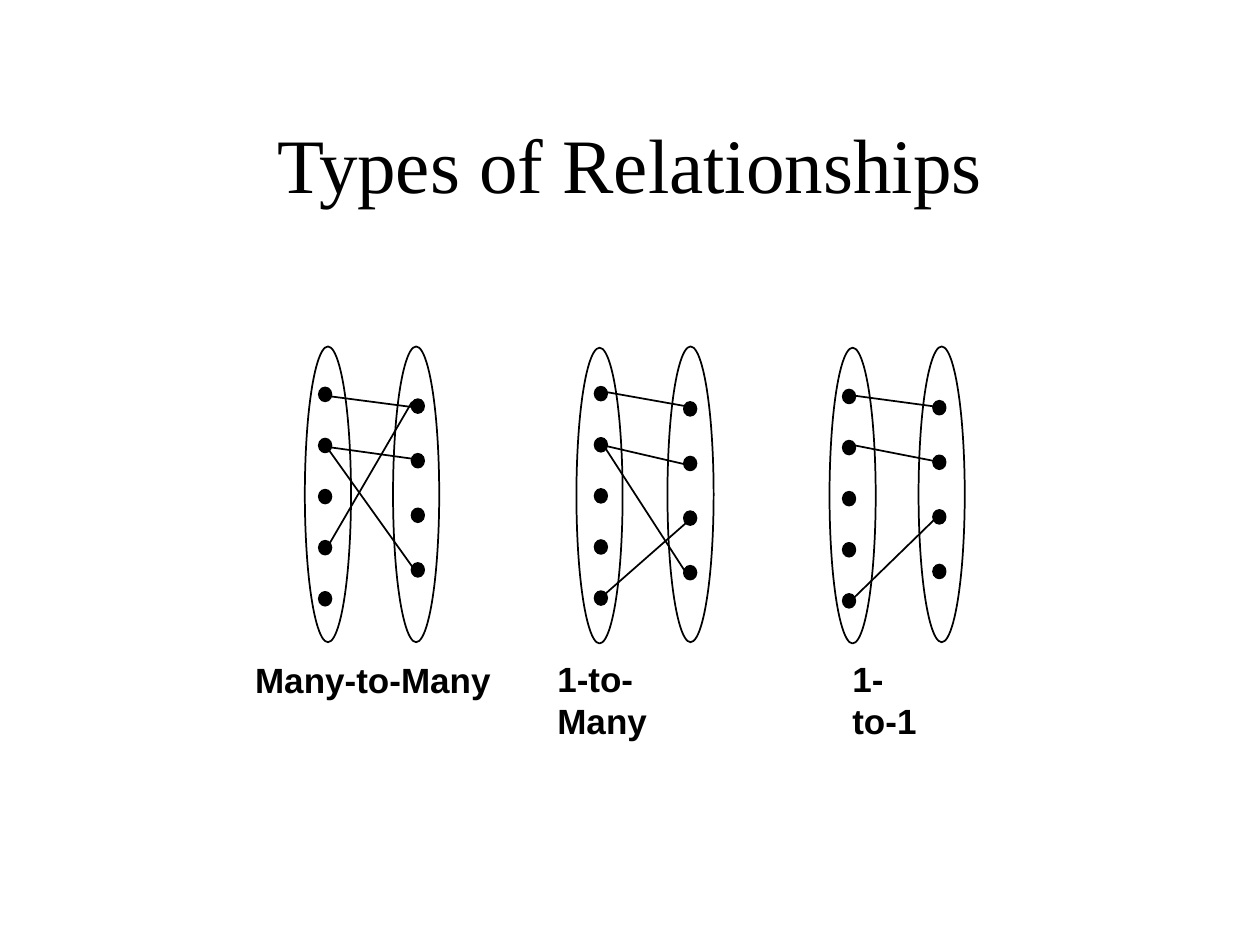
import pptx
import pptx.util
import pptx.dml.color
import pptx.enum.shapes
import pptx.enum.text
import pptx.oxml.ns
import lxml.etree

Pt = pptx.util.Pt
SHAPE = pptx.enum.shapes.MSO_SHAPE
ALIGN = pptx.enum.text.PP_ALIGN

THEME = {
    "ink": pptx.dml.color.RGBColor(0, 0, 0),
    "line": 1,
    "title": {"name": "Times New Roman", "size": Pt(44), "bold": False},
    "label": {"name": "Arial", "size": Pt(20), "bold": True},
}
TITLE = ("Types of Relationships", (54, 48, 612, 90))
OVAL = (26.4, 169)
DOT = (7.2, 7.9)

GRAPHS = [
    {
        "label": ("Many-to-Many", (138.2, 373, 149.8, 31), ALIGN.CENTER),
        "ovals": [(174.2, 198), (224.6, 198)],
        "dots": [(182.2, 221.4, 5, 29.2), (235.2, 228.1, 4, 31.2)],
        "links": [
            (185.8, 226.1, 235.4, 232.6),
            (188.6, 255.6, 240.5, 262.8),
            (187.2, 312.5, 235.4, 229.7),
            (185.8, 254.2, 238.3, 327.6),
        ],
    },
    {
        "label": ("1-to-Many", (311.4, 372.2, 107, 31), ALIGN.LEFT),
        "ovals": [(329.4, 198.7), (381.4, 198)],
        "dots": [(339.8, 221, 5, 29.2), (390.8, 229.7, 4, 31.2)],
        "links": [
            (345.6, 223.9, 394.6, 232.6),
            (343.4, 254.2, 393.1, 265.7),
            (345.6, 255.6, 393.1, 329),
            (394.6, 296.6, 341.3, 343.4),
        ],
    },
    {
        "label": ("1-to-1", (480, 372.2, 67, 31), ALIGN.LEFT),
        "ovals": [(474, 198.7), (524.9, 198)],
        "dots": [(481.6, 222.6, 5, 29.2), (533.2, 229, 4, 31.2)],
        "links": [
            (488.2, 226.1, 536.4, 232.6),
            (486.7, 254.2, 537.8, 264.2),
            (485.3, 344.2, 536.4, 294.5),
        ],
    },
]


def style(item, values):
    for key, value in values.items():
        setattr(item, key, value)


def stroke(item):
    item.line.color.rgb = THEME["ink"]
    item.line.width = Pt(THEME["line"])


def write(shape, text, kind, align):
    frame = shape.text_frame
    frame.word_wrap = True
    frame.text = text
    para = frame.paragraphs[0]
    para.alignment = align
    font = para.runs[0].font
    style(font, THEME[kind])
    font.color.rgb = THEME["ink"]


def round_shape(group, spot, size, solid):
    shape = group.shapes.add_shape(SHAPE.OVAL, *map(Pt, spot + size))
    shape.shadow.inherit = False
    stroke(shape)
    if solid:
        shape.fill.solid()
        shape.fill.fore_color.rgb = THEME["ink"]
    else:
        shape.fill.background()


def link(group, ends):
    line = group.shapes.add_connector(
        pptx.enum.shapes.MSO_CONNECTOR.STRAIGHT, *map(Pt, ends)
    )
    stroke(line)
    lxml.etree.SubElement(
        line._element.spPr, pptx.oxml.ns.qn("a:effectLst")
    )


def draw(slide, graph):
    group = slide.shapes.add_group_shape()
    text, box, align = graph["label"]
    write(group.shapes.add_textbox(*map(Pt, box)), text, "label", align)
    for spot in graph["ovals"]:
        round_shape(group, spot, OVAL, False)
    for ends in graph["links"]:
        link(group, ends)
    for left, top, count, step in graph["dots"]:
        for row in range(count):
            round_shape(group, (left, top + row * step), DOT, True)


def main():
    deck = pptx.Presentation()
    style(deck, {"slide_width": Pt(720), "slide_height": Pt(540)})
    slide = deck.slides.add_slide(deck.slide_layouts[5])
    text, box = TITLE
    title = slide.shapes.title
    style(title, dict(zip(("left", "top", "width", "height"), map(Pt, box))))
    write(title, text, "title", ALIGN.CENTER)
    title.text_frame.vertical_anchor = pptx.enum.text.MSO_ANCHOR.MIDDLE
    for graph in GRAPHS:
        draw(slide, graph)
    deck.save("out.pptx")


if __name__ == "__main__":
    main()
